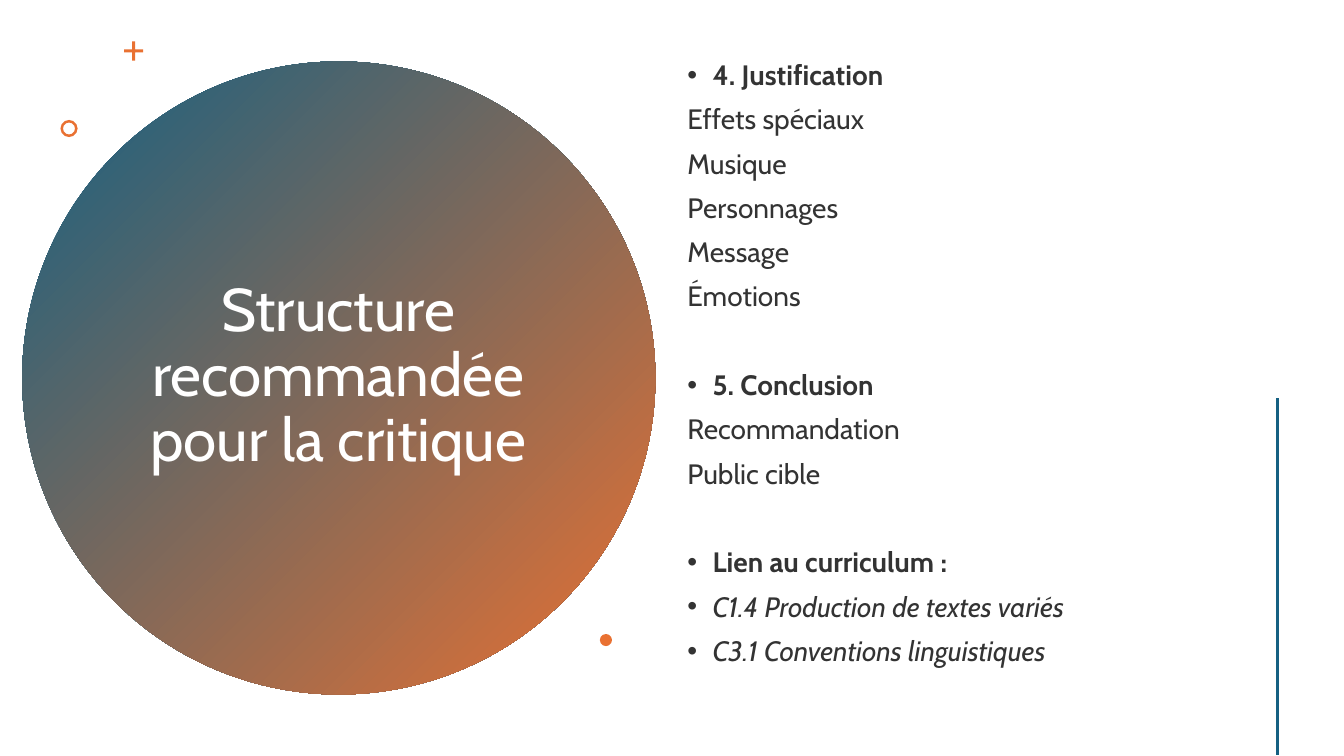
from dataclasses import dataclass

from lxml.etree import SubElement
from pptx import Presentation
from pptx.dml.color import RGBColor
from pptx.enum.shapes import MSO_CONNECTOR, MSO_SHAPE
from pptx.enum.text import MSO_ANCHOR, PP_ALIGN
from pptx.oxml.ns import qn
from pptx.util import Inches, Pt


@dataclass(frozen=True)
class Theme:
    """Colours, font and type sizes of the slide."""
    blue: RGBColor = RGBColor(0x15, 0x60, 0x82)
    orange: RGBColor = RGBColor(0xE9, 0x71, 0x32)
    ink: RGBColor = RGBColor(0x33, 0x33, 0x33)
    white: RGBColor = RGBColor(0xFF, 0xFF, 0xFF)
    font: str = "Cabin"
    title_size: int = 43
    body_size: int = 20
    paragraph_gap: int = 10
    section_gap: float = 41.8
    line_spacing: float = 0.9


@dataclass(frozen=True)
class Box:
    """A rectangle in slide units."""
    left: int
    top: int
    width: int
    height: int

    def inner(self, left, top, width, height):
        """Return an inner box given as percentages of this one."""
        return Box(
            round(self.left + self.width * left / 100),
            round(self.top + self.height * top / 100),
            round(self.width * width / 100),
            round(self.height * height / 100),
        )

    @property
    def bounds(self):
        """Return left, top, width and height."""
        return self.left, self.top, self.width, self.height


THEME = Theme()
TITLE = "Structure recommandée pour la critique"
SECTIONS = [
    ("4. Justification",
     ["Effets spéciaux", "Musique", "Personnages", "Message", "Émotions"], False),
    ("5. Conclusion", ["Recommandation", "Public cible"], False),
    ("Lien au curriculum :",
     ["C1.4 Production de textes variés", "C3.1 Conventions linguistiques"], True),
]
ORNAMENTS = [
    (MSO_SHAPE.CROSS, 0.42, 16.08, -3.18, 3.03),
    (MSO_SHAPE.DONUT, 0.15, 6.05, 9.24, 2.71),
    (MSO_SHAPE.OVAL, None, 91.24, 90.45, 1.91),
]


def add_plain_shape(slide, kind, box):
    """Add a preset shape without outline or shadow."""
    shape = slide.shapes.add_shape(kind, *box.bounds)
    shape.shadow.inherit = False
    shape.line.fill.background()
    return shape


def add_text_frame(slide, box, anchor):
    """Add a wrapping text box and return its frame."""
    frame = slide.shapes.add_textbox(*box.bounds).text_frame
    frame.word_wrap = True
    frame.vertical_anchor = anchor
    return frame


def style_paragraph(paragraph, size, color):
    """Apply the theme font and line spacing to a paragraph."""
    paragraph.line_spacing = THEME.line_spacing
    paragraph.font.name = THEME.font
    paragraph.font.size = Pt(size)
    paragraph.font.color.rgb = color


def add_bullet(paragraph):
    """Give a paragraph a round bullet with a hanging indent."""
    properties = paragraph._p.get_or_add_pPr()
    properties.set("marL", str(Inches(0.25)))
    properties.set("indent", str(-Inches(0.25)))
    SubElement(properties, qn("a:buFont")).set("typeface", "Arial")
    SubElement(properties, qn("a:buChar")).set("char", "•")


def add_title_disc(slide, box):
    """Draw the gradient disc, its title and the ornaments around it."""
    disc = add_plain_shape(slide, MSO_SHAPE.OVAL, box)
    disc.fill.gradient()
    disc.fill.gradient_angle = 315
    for stop, color in zip(disc.fill.gradient_stops, (THEME.blue, THEME.orange)):
        stop.color.rgb = color

    frame = add_text_frame(slide, box.inner(18.15, 12.74, 63.54, 74.36), MSO_ANCHOR.MIDDLE)
    paragraph = frame.paragraphs[0]
    paragraph.text = TITLE
    paragraph.alignment = PP_ALIGN.CENTER
    style_paragraph(paragraph, THEME.title_size, THEME.white)

    for kind, adjustment, left, top, size in ORNAMENTS:
        ornament = add_plain_shape(slide, kind, box.inner(left, top, size, size))
        ornament.fill.solid()
        ornament.fill.fore_color.rgb = THEME.orange
        if adjustment is not None:
            ornament.adjustments[0] = adjustment


def add_outline(slide, box):
    """Write the sections, each a bold heading followed by its items."""
    frame = add_text_frame(slide, box, MSO_ANCHOR.TOP)
    for number, (heading, items, is_reference) in enumerate(SECTIONS):
        for position, text in enumerate([heading, *items]):
            is_heading = position == 0
            is_first = is_heading and number == 0
            paragraph = frame.paragraphs[0] if is_first else frame.add_paragraph()
            paragraph.text = text
            if is_heading or is_reference:
                add_bullet(paragraph)
            if not is_first:
                gap = THEME.section_gap if is_heading else THEME.paragraph_gap
                paragraph.space_before = Pt(gap)
            style_paragraph(paragraph, THEME.body_size, THEME.ink)
            paragraph.font.bold = is_heading
            paragraph.font.italic = is_reference and not is_heading


def add_side_rule(slide, box):
    """Draw a vertical rule along the left edge of the box."""
    rule = slide.shapes.add_connector(
        MSO_CONNECTOR.STRAIGHT, box.left, box.top, box.left, box.top + box.height)
    rule.line.color.rgb = THEME.blue
    rule.line.width = Pt(2)
    SubElement(rule._element.spPr, qn("a:effectLst"))


def main():
    """Build and save the presentation."""
    presentation = Presentation()
    presentation.slide_width = Inches(13.33)
    presentation.slide_height = Inches(7.5)
    slide = presentation.slides.add_slide(presentation.slide_layouts[6])
    page = Box(0, 0, presentation.slide_width, presentation.slide_height)
    add_title_disc(slide, page.inner(1.65, 8.13, 47.11, 83.73))
    add_outline(slide, page.inner(50.41, 7.47, 44.64, 85.07))
    add_side_rule(slide, page.inner(95.05, 52.67, 4.95, 47.2))
    presentation.save("out.pptx")


if __name__ == "__main__":
    main()
